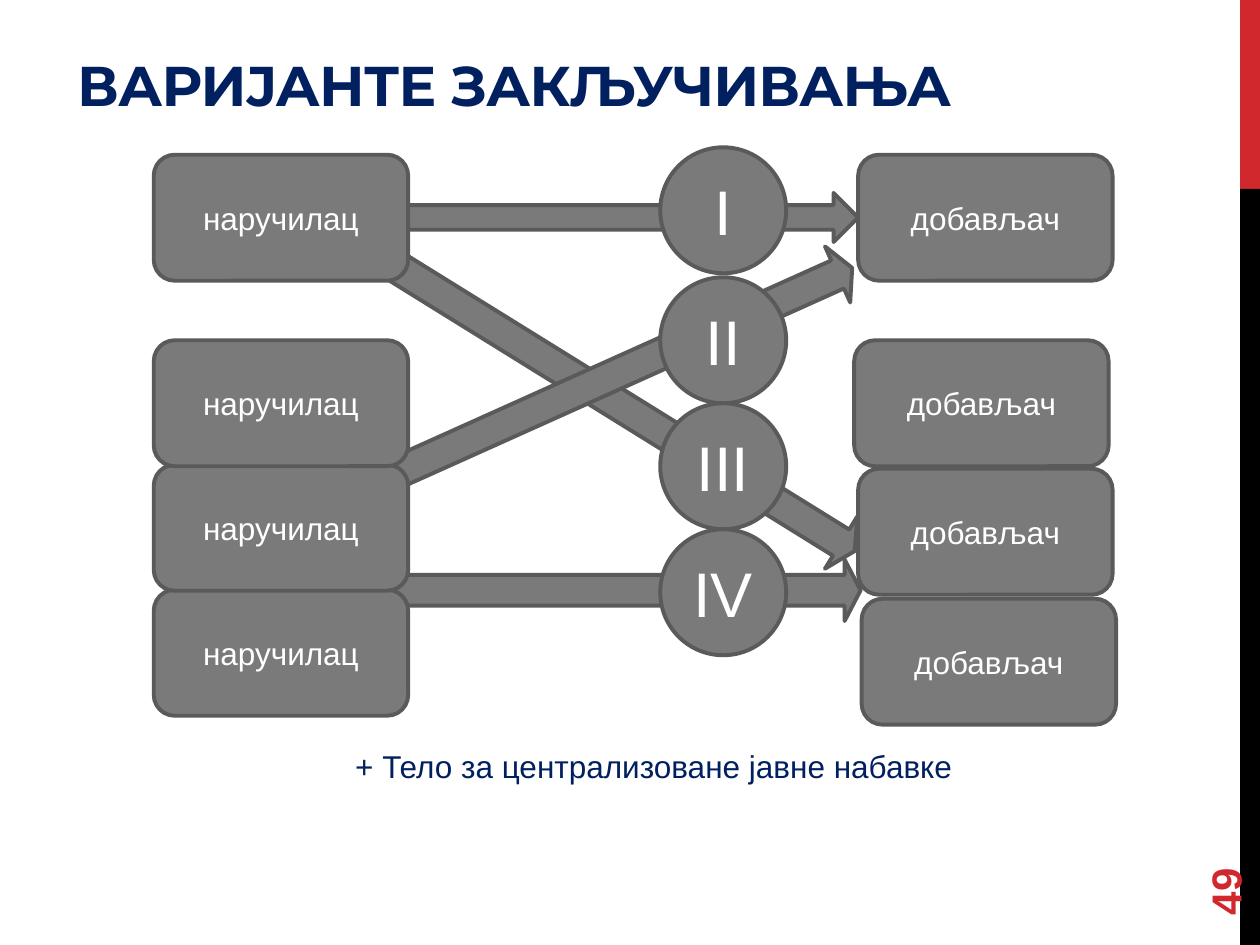
from dataclasses import dataclass

from pptx import Presentation
from pptx.dml.color import RGBColor
from pptx.enum.shapes import MSO_SHAPE
from pptx.enum.text import MSO_ANCHOR, MSO_AUTO_SIZE, PP_ALIGN
from pptx.util import Cm, Pt


@dataclass(frozen=True)
class Theme:
    """Colours, fonts and type sizes of the slide."""
    navy: str = "002060"
    red: str = "D1282E"
    black: str = "000000"
    white: str = "FFFFFF"
    gray: str = "7A7A7A"
    edge: str = "5A5A5A"
    head_font: str = "Montserrat"
    body_font: str = "Arial"
    title: int = 32
    numeral: int = 36
    page: int = 24
    body: int = 18
    line: float = 2.25


T = Theme()


def set_attrs(obj, values):
    """Set each named attribute of an object."""
    for name, value in values.items():
        setattr(obj, name, value)


def write(sp, text, size, color, font=T.body_font, bold=False,
          align=PP_ALIGN.LEFT, **frame):
    """Put one formatted run into a shape and return it."""
    tf = sp.text_frame
    set_attrs(tf, {"word_wrap": True, "vertical_anchor": MSO_ANCHOR.MIDDLE, **frame})
    p = tf.paragraphs[0]
    p.alignment = align
    r = p.add_run()
    r.text = text
    set_attrs(r.font, {"name": font, "size": Pt(size), "bold": bold})
    r.font.color.rgb = RGBColor.from_string(color)
    return r


def add_shape(s, kind, box, fill=T.gray, edge=T.edge):
    """Add a flat preset shape in a box given in centimetres."""
    sp = s.shapes.add_shape(kind, *map(Cm, box))
    sp.shadow.inherit = False
    sp.fill.solid()
    sp.fill.fore_color.rgb = RGBColor.from_string(fill)
    if edge:
        sp.line.color.rgb = RGBColor.from_string(edge)
        sp.line.width = Pt(T.line)
    else:
        sp.line.fill.background()
    return sp


def add_side_strip(s, x, y, w, h):
    """Draw the red and black strip, red on the top fifth."""
    cut = h / 5
    add_shape(s, MSO_SHAPE.RECTANGLE, (x, y, w, cut), T.red, None)
    add_shape(s, MSO_SHAPE.RECTANGLE, (x, y + cut, w, h - cut), T.black, None)


def add_title(s, text, box):
    """Move and format the title placeholder."""
    sp = s.shapes.title
    set_attrs(sp, dict(zip(("left", "top", "width", "height"), map(Cm, box))))
    r = write(sp, text, T.title, T.navy, T.head_font, True,
              vertical_anchor=MSO_ANCHOR.BOTTOM, auto_size=MSO_AUTO_SIZE.NONE)
    r.font._element.set("spc", "-60")


def add_arrow(s, box, rotation=0, head=0.5):
    """Draw a block arrow turned about its centre."""
    sp = add_shape(s, MSO_SHAPE.RIGHT_ARROW, box)
    sp.rotation = rotation
    sp.adjustments[1] = head


def add_nodes(s, kind, x, y, w, h, nodes, size):
    """Draw labelled nodes at (label, dx, dy) from the column's corner."""
    for label, dx, dy in nodes:
        sp = add_shape(s, kind, (x + dx, y + dy, w, h))
        write(sp, label, size, T.white, align=PP_ALIGN.CENTER)


def add_note(s, text, box, size, color, rotation=0, **style):
    """Add a line of free text."""
    sp = s.shapes.add_textbox(*map(Cm, box))
    sp.rotation = rotation
    write(sp, text, size, color, **style)


def add_diagram(s, x, y):
    """Draw buyers, suppliers and the four numbered variants between them."""
    for dx, dy, w, rotation in ((4.75, 8.31, 9.5, 0), (3.53, 4.5, 11.46, 31.8),
                                (4.29, 3.91, 10.24, 335.8)):
        add_arrow(s, (x + dx, y + dy, w, 1.24), rotation, 0.26)
    buyers = [("наручилац", 0, dy) for dy in (0.15, 8.92, 6.4, 3.89)]
    suppliers = [("добављач", dx, dy) for dx, dy in
                 ((0.08, 0.15), (0, 3.89), (0.08, 6.48), (0.15, 9.1))]
    variants = [(label, 0, dy) for label, dy in
                zip(("I", "II", "III", "IV"), (0, 2.62, 5.16, 7.7))]
    add_nodes(s, MSO_SHAPE.ROUNDED_RECTANGLE, x, y, 5.13, 2.54, buyers, T.body)
    add_nodes(s, MSO_SHAPE.ROUNDED_RECTANGLE, x + 14.12, y, 5.13, 2.54, suppliers, T.body)
    add_arrow(s, (x + 5.13, y + 0.92, 9.07, 0.99))
    add_nodes(s, MSO_SHAPE.OVAL, x + 10.21, y, 2.54, 2.54, variants, T.numeral)


def main():
    """Build and save the slide."""
    prs = Presentation()
    set_attrs(prs, {"slide_width": Cm(25.4), "slide_height": Cm(19.05)})
    s = prs.slides.add_slide(prs.slide_layouts[5])
    add_side_strip(s, 25, 0, 0.4, 19.05)
    add_title(s, "ВАРИЈАНТЕ ЗАКЉУЧИВАЊА", (1.3, 0.43, 22.86, 2.08))
    add_note(s, "49", (22.86, 16.36, 3.66, 1.02), T.page, T.red, 270, bold=True)
    add_diagram(s, 3.1, 2.97)
    add_note(s, "+ Тело за централизоване јавне набавке", (6.91, 14.94, 12.67, 1.02),
             T.body, T.navy, word_wrap=False, vertical_anchor=MSO_ANCHOR.TOP,
             auto_size=MSO_AUTO_SIZE.SHAPE_TO_FIT_TEXT)
    prs.save("out.pptx")


if __name__ == "__main__":
    main()
